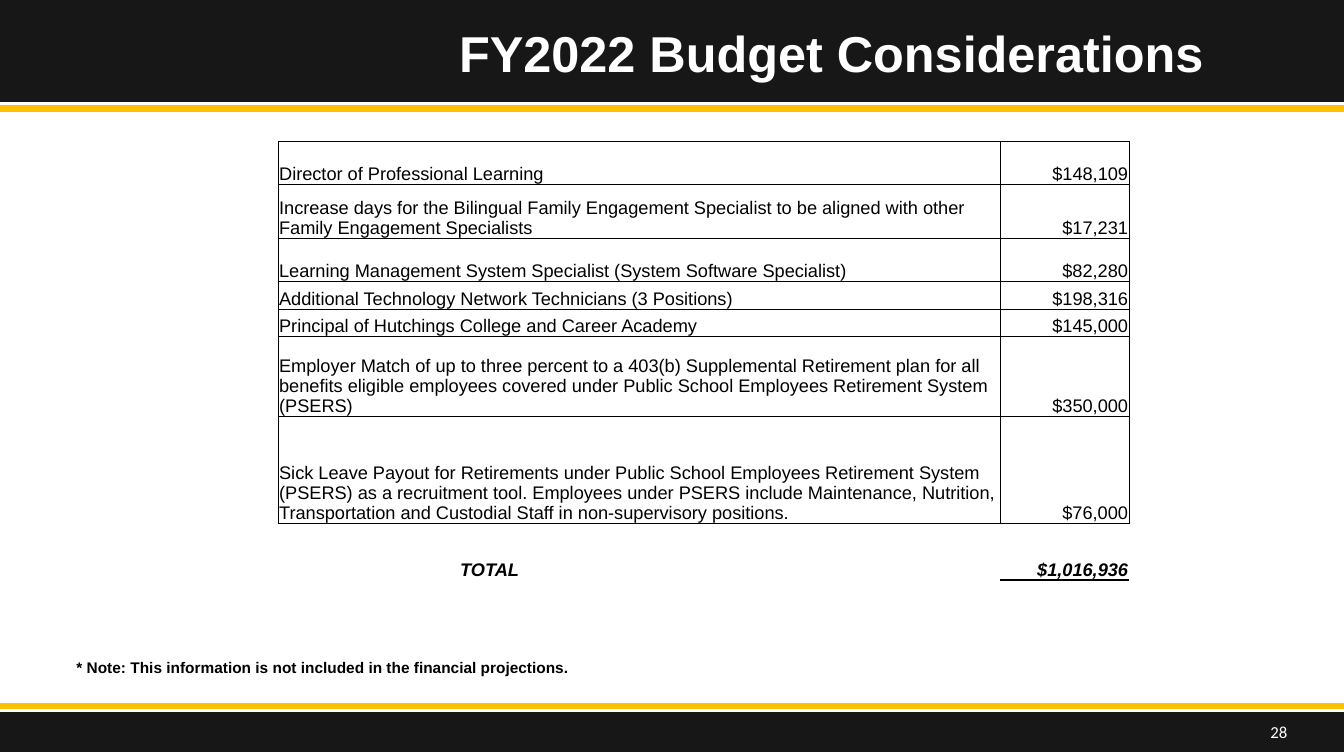
from lxml import etree
from pptx import Presentation
from pptx.dml.color import RGBColor
from pptx.enum.shapes import MSO_SHAPE
from pptx.enum.text import MSO_ANCHOR, PP_ALIGN
from pptx.oxml.ns import qn
from pptx.util import Pt

RECTANGLE = MSO_SHAPE.RECTANGLE
TOP, MIDDLE, BOTTOM = MSO_ANCHOR.TOP, MSO_ANCHOR.MIDDLE, MSO_ANCHOR.BOTTOM
LEFT, CENTER, RIGHT = PP_ALIGN.LEFT, PP_ALIGN.CENTER, PP_ALIGN.RIGHT

BLACK = RGBColor(0x00, 0x00, 0x00)
WHITE = RGBColor(0xFF, 0xFF, 0xFF)
CHARCOAL = RGBColor(0x18, 0x17, 0x17)
GOLD = RGBColor(0xFF, 0xC0, 0x00)

SLIDE_WIDTH, SLIDE_HEIGHT = 960, 540
TABLE_SIZE = 13
CELL_INSET = 0.7
TOTAL_INDENT = 130
THIN, THICK = 0.5, 2

# Budget items: row height, description, amount
ITEMS = [
    (31, "Director of Professional Learning", "$148,109"),
    (38.5, "Increase days for the Bilingual Family Engagement Specialist to be "
     "aligned with other Family Engagement Specialists", "$17,231"),
    (31, "Learning Management System Specialist (System Software Specialist)", "$82,280"),
    (19.4, "Additional Technology Network Technicians (3 Positions)", "$198,316"),
    (19.4, "Principal of Hutchings College and Career Academy", "$145,000"),
    (57.5, "Employer Match of up to three percent to a 403(b) Supplemental "
     "Retirement plan for all benefits eligible employees covered under Public "
     "School Employees Retirement System (PSERS)", "$350,000"),
    (76.5, "Sick Leave Payout for Retirements under Public School Employees "
     "Retirement System (PSERS) as a recruitment tool. Employees under PSERS "
     "include Maintenance, Nutrition, Transportation and Custodial Staff in "
     "non-supervisory positions.", "$76,000"),
]
SPACER = (19.4, "", "")
TOTAL = (20.9, "TOTAL", "$1,016,936")
CLOSING = (17.3, "", "")


def write_text(text_frame, text, size, font="Arial", color=BLACK, bold=False,
               italic=False, align=LEFT):
    paragraph = text_frame.paragraphs[0]
    paragraph.alignment = align
    if not text:
        # An empty cell keeps the table's text size
        etree.SubElement(paragraph._p, qn("a:endParaRPr"), sz=str(size * 100))
        return
    run = paragraph.add_run()
    run.text = text
    run.font.size = Pt(size)
    run.font.name = font
    run.font.color.rgb = color
    run.font.bold = bold
    run.font.italic = italic


def add_bar(slide, top, height, color):
    bar = slide.shapes.add_shape(RECTANGLE, 0, Pt(top), Pt(SLIDE_WIDTH), Pt(height))
    bar.shadow.inherit = False
    bar.fill.solid()
    bar.fill.fore_color.rgb = color
    bar.line.color.rgb = color
    bar.line.width = Pt(1)


def add_text_box(slide, left, top, width, height, text, anchor=TOP, **text_format):
    box = slide.shapes.add_textbox(Pt(left), Pt(top), Pt(width), Pt(height))
    box.text_frame.word_wrap = True
    box.text_frame.vertical_anchor = anchor
    write_text(box.text_frame, text, **text_format)


def set_borders(cell, **widths):
    """Draw the sides named L, R, T and B; clear the others."""
    properties = cell._tc.get_or_add_tcPr()
    for side in "LRTB":
        line = etree.SubElement(properties, qn(f"a:ln{side}"))
        if side in widths:
            line.set("w", str(Pt(widths[side])))
            fill = etree.SubElement(line, qn("a:solidFill"))
            etree.SubElement(fill, qn("a:srgbClr"), val=str(BLACK))
        else:
            etree.SubElement(line, qn("a:noFill"))


def fill_cell(cell, text, borders, indent=CELL_INSET, **text_format):
    cell.margin_left = Pt(indent)
    cell.margin_right = cell.margin_top = Pt(CELL_INSET)
    cell.margin_bottom = 0
    cell.vertical_anchor = BOTTOM
    set_borders(cell, **borders)
    cell.fill.background()
    write_text(cell.text_frame, text, TABLE_SIZE, **text_format)


def add_budget_table(slide, left, top, column_widths):
    rows = ITEMS + [SPACER, TOTAL, CLOSING]
    frame = slide.shapes.add_table(
        len(rows), len(column_widths), Pt(left), Pt(top),
        Pt(sum(column_widths)), Pt(sum(row[0] for row in rows)))
    table = frame.table
    table.first_row = table.horz_banding = False
    for column, width in zip(table.columns, column_widths):
        column.width = Pt(width)

    # Borders for the label and amount cells of each kind of row
    grid = dict.fromkeys("LRTB", THIN)
    borders = [(grid, grid)] * len(ITEMS) + [
        ({"T": THIN}, {"T": THIN}), ({}, {"B": THICK}), ({}, {"T": THICK})]

    for index, (height, label, amount) in enumerate(rows):
        table.rows[index].height = Pt(height)
        is_total = rows[index] is TOTAL
        style = {"bold": is_total, "italic": is_total}
        label_borders, amount_borders = borders[index]
        fill_cell(table.cell(index, 0), label, label_borders,
                  indent=TOTAL_INDENT if is_total else CELL_INSET, **style)
        fill_cell(table.cell(index, 1), amount, amount_borders, align=RIGHT, **style)


def main():
    presentation = Presentation()
    presentation.slide_width = Pt(SLIDE_WIDTH)
    presentation.slide_height = Pt(SLIDE_HEIGHT)
    slide = presentation.slides.add_slide(presentation.slide_layouts[6])

    # Header and footer bars
    add_bar(slide, 0, 72.7, CHARCOAL)
    add_bar(slide, 75.8, 3.6, GOLD)
    add_bar(slide, 509, 27.4, CHARCOAL)
    add_bar(slide, 502.7, 3.6, GOLD)

    # Slide number and title
    add_text_box(slide, 710.6, 508.3, 216, 28.8, "28", anchor=MIDDLE, size=12,
                 font="Calibri", color=WHITE, align=RIGHT)
    add_text_box(slide, 228, 12.2, 732, 64.8, "FY2022 Budget Considerations",
                 size=36, color=WHITE, bold=True, align=CENTER)

    # Budget table and note
    add_budget_table(slide, 198.7, 100.8, (515.5, 92.2))
    add_text_box(slide, 47.5, 458, 482.4, 28.8,
                 "* Note: This information is not included in the financial projections.",
                 anchor=BOTTOM, size=11, bold=True)

    presentation.save("out.pptx")


if __name__ == "__main__":
    main()
